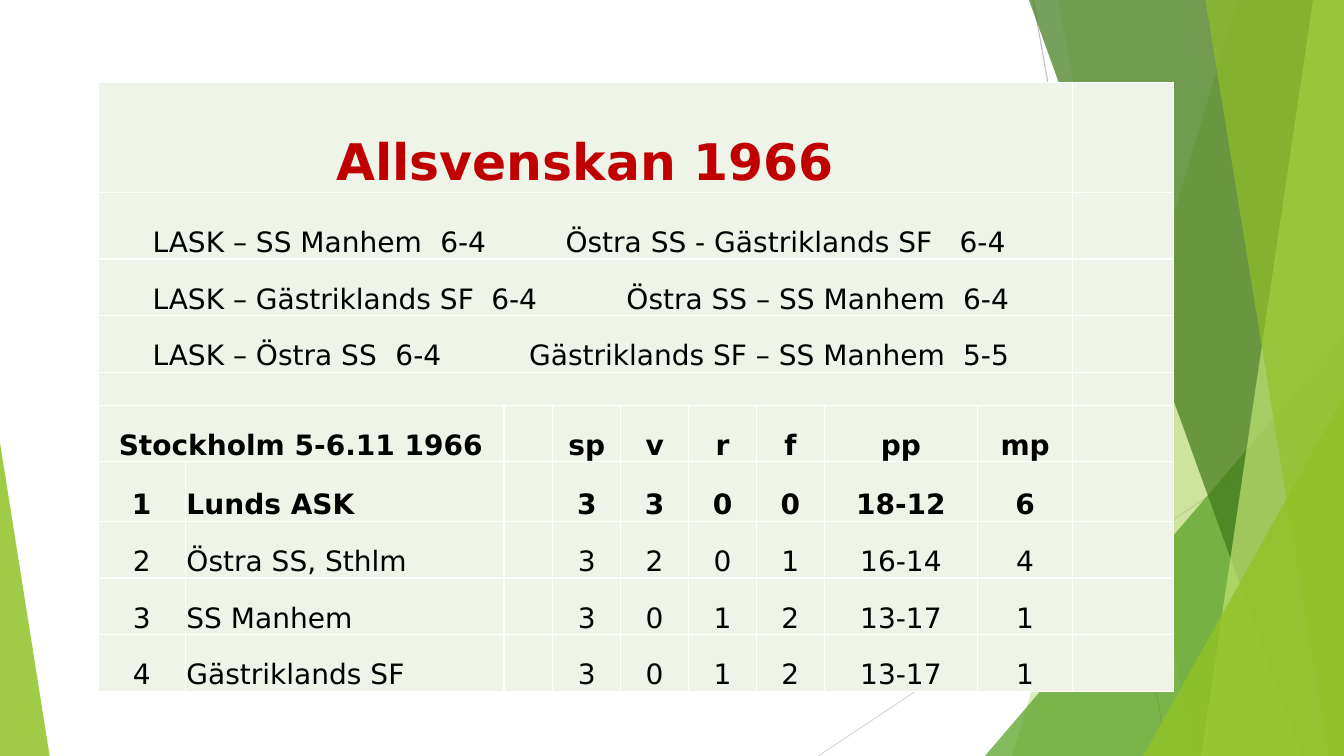
import dataclasses

import pptx
import pptx.dml.color
import pptx.enum.shapes
import pptx.enum.text
import pptx.oxml
import pptx.oxml.ns
import pptx.util

Pt = pptx.util.Pt
ALIGN = pptx.enum.text.PP_ALIGN
SPACE = pptx.oxml.ns.nsdecls("a")


@dataclasses.dataclass(frozen=True)
class Theme:
    font: str = "DejaVu Sans"
    head: int = 36
    body: int = 20
    ink: str = "000000"
    red: str = "C00000"
    cell: str = "EEF4E8"
    rule: str = "FFFFFF"
    grey: str = "BFBFBF"
    pale: str = "D9D9D9"
    lime: str = "90C226"
    green: str = "54A021"
    dark: str = "3F7819"
    light: str = "C0E474"


THEME = Theme()
WIDE, HIGH = 960, 540

COLS = [62.5, 227.5, 35, 48.5, 48.5, 48.5, 48.5, 109.5, 68, 72]
ROWS = [78.5, 47.5, 40.5, 40.5, 23.5, 40.5, 42.5, 40.5, 40.5, 40.5]

GAMES = [
    ("LASK – SS Manhem\t6-4\tÖstra SS - Gästriklands SF\t6-4", [205.5, 295, 576.5]),
    ("LASK – Gästriklands SF\t6-4\tÖstra SS – SS Manhem\t6-4", [242, 338.5, 579]),
    ("LASK – Östra SS\t6-4\tGästriklands SF – SS Manhem\t5-5", [173.5, 269, 579]),
]
TEAMS = [
    ["Stockholm 5-6.11 1966", "", "", "sp", "v", "r", "f", "pp", "mp"],
    ["1", "Lunds ASK", "", "3", "3", "0", "0", "18-12", "6"],
    ["2", "Östra SS, Sthlm", "", "3", "2", "0", "1", "16-14", "4"],
    ["3", "SS Manhem", "", "3", "0", "1", "2", "13-17", "1"],
    ["4", "Gästriklands SF", "", "3", "0", "1", "2", "13-17", "1"],
]


def rgb(code):
    return pptx.dml.color.RGBColor.from_string(code)


def paint(shape, color, alpha):
    shape.shadow.inherit = False
    shape.line.fill.background()
    shape.fill.solid()
    shape.fill.fore_color.rgb = rgb(color)
    tint = shape.fill._xPr.find(".//" + pptx.oxml.ns.qn("a:srgbClr"))
    tint.append(pptx.oxml.parse_xml(f'<a:alpha {SPACE} val="{alpha * 1000}"/>'))


def line(slide, start, end, color):
    link = slide.shapes.add_connector(
        pptx.enum.shapes.MSO_CONNECTOR.STRAIGHT, *map(Pt, start + end))
    link.line.color.rgb = rgb(color)
    link.line.width = Pt(0.75)
    link._element.spPr.append(pptx.oxml.parse_xml(f"<a:effectLst {SPACE}/>"))


def band(slide, top, base, color, alpha):
    path = slide.shapes.build_freeform(top, 0, scale=Pt(1))
    path.add_line_segments([(WIDE, 0), (WIDE, HIGH), (base, HIGH)], close=True)
    paint(path.convert_to_shape(), color, alpha)


def wedge(slide, left, top, width, peak, color, alpha):
    shape = slide.shapes.add_shape(
        pptx.enum.shapes.MSO_SHAPE.ISOSCELES_TRIANGLE,
        Pt(left), Pt(top), Pt(width), Pt(HIGH - top))
    shape.adjustments[0] = peak
    paint(shape, color, alpha)


def text(cell, words, size=THEME.body, bold=False, color=THEME.ink,
         align=ALIGN.CENTER, left=0.75, tabs=()):
    cell.margin_left = Pt(left)
    para = cell.text_frame.paragraphs[0]
    para.alignment = align
    run = para.add_run()
    run.text = words
    run.font.name = THEME.font
    run.font.size = Pt(size)
    run.font.bold = bold
    run.font.color.rgb = rgb(color)
    if tabs:
        stops = "".join(f'<a:tab pos="{Pt(pos)}" algn="l"/>' for pos in tabs)
        para._p.get_or_add_pPr().append(
            pptx.oxml.parse_xml(f"<a:tabLst {SPACE}>{stops}</a:tabLst>"))


def dress(cell):
    cell.margin_left = cell.margin_right = cell.margin_top = Pt(0.75)
    cell.margin_bottom = Pt(0)
    cell.vertical_anchor = pptx.enum.text.MSO_ANCHOR.BOTTOM
    props = cell._tc.get_or_add_tcPr()
    for side in "LRTB":
        props.append(pptx.oxml.parse_xml(
            f'<a:ln{side} {SPACE} w="{Pt(1)}"><a:solidFill>'
            f'<a:srgbClr val="{THEME.rule}"/></a:solidFill></a:ln{side}>'))
    cell.fill.solid()
    cell.fill.fore_color.rgb = rgb(THEME.cell)


def grid(slide, left, top):
    frame = slide.shapes.add_table(
        len(ROWS), len(COLS), Pt(left), Pt(top), Pt(sum(COLS)), Pt(sum(ROWS)))
    table = frame.table
    table.first_row = table.horz_banding = False
    for col, width in zip(table.columns, COLS):
        col.width = Pt(width)
    for row, height in zip(table.rows, ROWS):
        row.height = Pt(height)
    for cell in table.iter_cells():
        dress(cell)
    for row in range(5):
        table.cell(row, 0).merge(table.cell(row, 8))
    table.cell(5, 0).merge(table.cell(5, 1))
    return table


def scene(slide):
    line(slide, (738, 0), (834, HIGH), THEME.grey)
    line(slide, (WIDE, 290), (584.5, HIGH), THEME.pale)
    band(slide, 884, 723, THEME.lime, 30)
    band(slide, 756, 852, THEME.lime, 20)
    wedge(slide, 703.5, 240, 256.5, 1, THEME.green, 72)
    band(slide, 735, 930, THEME.dark, 70)
    band(slide, 938, 858, THEME.light, 70)
    band(slide, 861, 949, THEME.lime, 65)
    wedge(slide, 816.5, 283, 143.5, 1, THEME.lime, 80)
    wedge(slide, 0, 316, 35.5, 0, THEME.lime, 85)


def main():
    deck = pptx.Presentation()
    deck.slide_width, deck.slide_height = Pt(WIDE), Pt(HIGH)
    slide = deck.slides.add_slide(deck.slide_layouts[6])
    scene(slide)
    table = grid(slide, 70, 59)
    text(table.cell(0, 0), "Allsvenskan 1966",
         size=THEME.head, bold=True, color=THEME.red)
    for row, (game, tabs) in enumerate(GAMES, 1):
        text(table.cell(row, 0), game, align=ALIGN.LEFT, left=39, tabs=tabs)
    for row, team in enumerate(TEAMS, 5):
        for col, words in enumerate(team):
            if words:
                text(table.cell(row, col), words, bold=row < 7,
                     align=ALIGN.LEFT if col == 1 else ALIGN.CENTER)
    deck.save("out.pptx")


if __name__ == "__main__":
    main()
